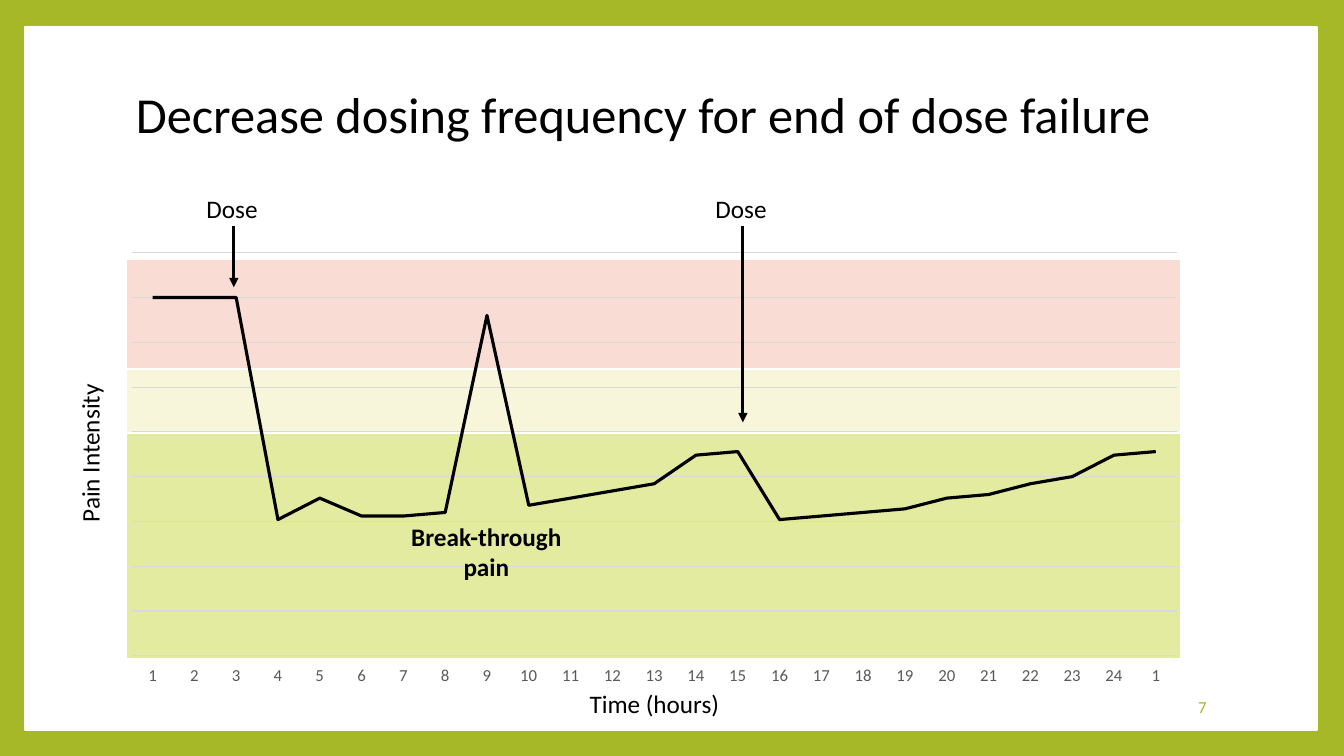
"""Build a slide charting pain intensity over time between two doses."""
from lxml.etree import SubElement
from pptx import Presentation
from pptx.chart.data import CategoryChartData
from pptx.dml.color import RGBColor
from pptx.enum.chart import XL_CHART_TYPE, XL_TICK_LABEL_POSITION, XL_TICK_MARK
from pptx.enum.shapes import MSO_CONNECTOR, MSO_SHAPE
from pptx.enum.text import MSO_ANCHOR, PP_ALIGN
from pptx.oxml import parse_xml
from pptx.oxml.ns import nsdecls, qn
from pptx.util import Pt


def color(hex_string):
    return RGBColor.from_string(hex_string)


def add_text(text, left, top, width, height, size=18, hex_string="000000",
             align=PP_ALIGN.LEFT, anchor=MSO_ANCHOR.TOP, wrap=True):
    box = slide.shapes.add_textbox(Pt(left), Pt(top), Pt(width), Pt(height))
    box.text_frame.word_wrap = wrap
    box.text_frame.vertical_anchor = anchor
    paragraph = box.text_frame.paragraphs[0]
    paragraph.text = text
    paragraph.alignment = align
    paragraph.font.name = "Calibri"
    paragraph.font.size = Pt(size)
    paragraph.font.color.rgb = color(hex_string)
    return box


presentation = Presentation()
presentation.slide_width = Pt(960)
presentation.slide_height = Pt(540)
slide = presentation.slides.add_slide(presentation.slide_layouts[6])
slide.background.fill.solid()
slide.background.fill.fore_color.rgb = color("A6B727")

panels = [
    (18, 19.4, 923, 502, "FFFFFF"),
    (90, 185, 754, 78.5, "F9DDD4"),
    (90, 263.5, 754, 46.1, "F7F6DA"),
    (90, 309.6, 754, 161.3, "E2EBA0"),
]
for left, top, width, height, fill in panels:
    shape = slide.shapes.add_shape(MSO_SHAPE.RECTANGLE, Pt(left), Pt(top), Pt(width), Pt(height))
    shape.shadow.inherit = False
    shape.fill.solid()
    shape.fill.fore_color.rgb = color(fill)
    shape.line.color.rgb = color("FFFFFF")
    shape.line.width = Pt(1.5)

title = add_text("Decrease dosing frequency for end of dose failure", 90, 30.2, 778, 106.6,
                 size=36, anchor=MSO_ANCHOR.MIDDLE)
title.text_frame.paragraphs[0].line_spacing = 0.9

chart_data = CategoryChartData()
chart_data.categories = [str(hour) for hour in range(1, 25)] + ["1"]
chart_data.add_series("Series 1", [
    100, 100, 100, 38, 44, 39, 39, 40, 95, 42, 44, 46, 48,
    56, 57, 38, 39, 40, 41, 44, 45, 48, 50, 56, 57,
])
chart = slide.shapes.add_chart(XL_CHART_TYPE.LINE, Pt(78.5), Pt(174.2), Pt(777.6), Pt(318.2),
                               chart_data).chart
chart.has_legend = False
chart.has_title = False
chart.font.name = "Calibri"
chart.font.size = Pt(10)
chart.font.color.rgb = color("000000")
chart.plots[0].vary_by_categories = False

pain_series = chart.plots[0].series[0]
pain_series.smooth = False
pain_series.format.line.color.rgb = color("000000")
pain_series.format.line.width = Pt(2.25)

time_axis = chart.category_axis
time_axis.major_tick_mark = XL_TICK_MARK.NONE
time_axis.tick_label_position = XL_TICK_LABEL_POSITION.LOW
time_axis.tick_labels.font.name = "Calibri"
time_axis.tick_labels.font.size = Pt(12)
time_axis.tick_labels.font.color.rgb = color("595959")

pain_axis = chart.value_axis
pain_axis.visible = False
pain_axis.minimum_scale = 0
pain_axis.maximum_scale = 112.5
pain_axis.major_unit = 12.5
pain_axis.has_major_gridlines = True
for line in (time_axis.format.line, pain_axis.major_gridlines.format.line):
    line.color.rgb = color("D9D9D9")
    line.width = Pt(0.75)

plot_area = chart.plots[0]._element.getparent()
for old_layout in plot_area.findall(qn("c:layout")):
    plot_area.remove(old_layout)
plot_area.insert(0, parse_xml(
    f'<c:layout {nsdecls("c")}><c:manualLayout><c:layoutTarget val="inner"/>'
    '<c:xMode val="edge"/><c:yMode val="edge"/>'
    '<c:x val="0.02"/><c:y val="0.02"/><c:w val="0.96"/><c:h val="0.905"/>'
    '</c:manualLayout></c:layout>'))

add_text("7", 734.4, 490.3, 134.6, 28.8, size=12, hex_string="A6B727",
         align=PP_ALIGN.RIGHT, anchor=MSO_ANCHOR.MIDDLE)
pain_label = add_text("Pain Intensity", 5.8, 307.4, 116.6, 29, wrap=False)
pain_label.rotation = 270
add_text("Time (hours)", 414, 488.2, 109.4, 29, wrap=False)

for dose_x, arrow_end in ((167, 205.2), (530.6, 301.7)):
    arrow = slide.shapes.add_connector(MSO_CONNECTOR.STRAIGHT, Pt(dose_x), Pt(161.3),
                                       Pt(dose_x), Pt(arrow_end))
    arrow.line.color.rgb = color("000000")
    arrow.line.width = Pt(2.25)
    SubElement(arrow.line._get_or_add_ln(), qn("a:tailEnd"), type="triangle")
    SubElement(arrow._element.spPr, qn("a:effectLst"))
    add_text("Dose", dose_x - 26.6, 134.6, 52.6, 29, wrap=False)

breakthrough = add_text("Break-through pain", 280.8, 368.6, 133.2, 51, align=PP_ALIGN.CENTER)
breakthrough.text_frame.paragraphs[0].font.bold = True

presentation.save("out.pptx")
